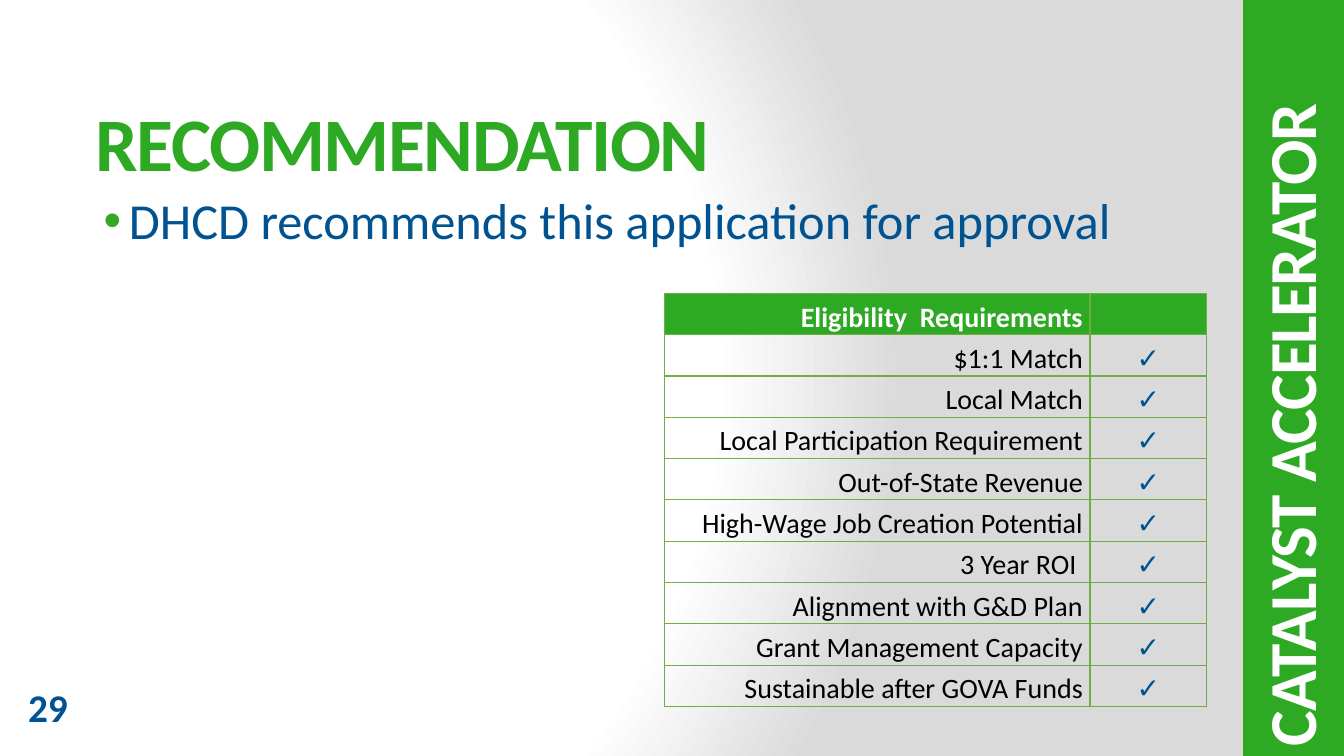
from dataclasses import dataclass

from lxml import etree
from pptx import Presentation
from pptx.dml.color import RGBColor
from pptx.enum.shapes import MSO_SHAPE
from pptx.enum.text import MSO_ANCHOR, PP_ALIGN
from pptx.oxml import parse_xml
from pptx.oxml.ns import nsdecls, qn
from pptx.util import Inches, Pt

RECT = MSO_SHAPE.RECTANGLE
TOP, MIDDLE, BOTTOM = MSO_ANCHOR.TOP, MSO_ANCHOR.MIDDLE, MSO_ANCHOR.BOTTOM
LEFT, CENTER, RIGHT = PP_ALIGN.LEFT, PP_ALIGN.CENTER, PP_ALIGN.RIGHT


@dataclass(frozen=True)
class Theme:
    face: str = "Calibri"
    green: str = "2DA923"
    dot: str = "38A725"
    blue: str = "005390"
    white: str = "FFFFFF"
    black: str = "000000"
    gray: str = "DADADA"
    rule: str = "70AD47"
    title: int = 54
    side: int = 48
    body: int = 36
    number: int = 28
    cell: int = 20


class Page:
    def __init__(self, slide, theme):
        self.slide = slide
        self.theme = theme

    def backdrop(self):
        """Fill the background with a circular gradient, white to gray."""
        stops = "".join(
            f'<a:gs pos="{pos * 1000}"><a:srgbClr val="{color}"/></a:gs>'
            for pos, color in ((0, self.theme.white), (75, self.theme.white),
                               (100, self.theme.gray)))
        self.slide.element.cSld.insert(0, parse_xml(
            f'<p:bg {nsdecls("p", "a")}><p:bgPr><a:gradFill rotWithShape="1">'
            f'<a:gsLst>{stops}</a:gsLst><a:path path="circle">'
            '<a:fillToRect l="20000" t="50000" r="100000" b="50000"/>'
            '</a:path></a:gradFill><a:effectLst/></p:bgPr></p:bg>'))

    def band(self, x, y, w, h, color):
        shape = self.slide.shapes.add_shape(
            RECT, Inches(x), Inches(y), Inches(w), Inches(h))
        shape.shadow.inherit = False
        shape.fill.solid()
        shape.fill.fore_color.rgb = RGBColor.from_string(color)
        shape.line.fill.background()

    def words(self, para, text, size, color, bold=False, align=LEFT):
        """Put one styled run in a paragraph and return the run."""
        run = para.add_run()
        run.text = text
        para.alignment = align
        font = para.font
        font.name, font.size, font.bold = self.theme.face, Pt(size), bold
        font.color.rgb = RGBColor.from_string(color)
        return run

    def text(self, x, y, w, h, text, size, color, bold=True, anchor=TOP,
             turn=0, tight=False, bullet=False):
        box = self.slide.shapes.add_textbox(
            Inches(x), Inches(y), Inches(w), Inches(h))
        box.rotation = turn
        frame = box.text_frame
        frame.word_wrap = True
        frame.vertical_anchor = anchor
        para = frame.paragraphs[0]
        if bullet:
            self.bullet(para)
        run = self.words(para, text, size, color, bold)
        if tight:
            run._r.get_or_add_rPr().set("spc", "-100")

    def bullet(self, para):
        props = para._p.get_or_add_pPr()
        props.set("marL", str(Inches(0.38)))
        props.set("indent", str(Inches(-0.25)))
        color = etree.SubElement(props, qn("a:buClr"))
        etree.SubElement(color, qn("a:srgbClr"), val=self.theme.dot)
        etree.SubElement(props, qn("a:buFont"), typeface="Arial")
        etree.SubElement(props, qn("a:buChar"), char="•")

    def border(self, cell):
        props = cell._tc.get_or_add_tcPr()
        for spot, side in enumerate(("lnL", "lnR", "lnT", "lnB")):
            props.insert(spot, parse_xml(
                f'<a:{side} {nsdecls("a")} w="12700"><a:solidFill>'
                f'<a:srgbClr val="{self.theme.rule}"/></a:solidFill></a:{side}>'))

    def cell(self, cell, text, color, bold, align, gap, fill=None):
        cell.margin_left = cell.margin_right = Inches(0.07)
        cell.margin_top = cell.margin_bottom = 0
        cell.vertical_anchor = BOTTOM
        if fill:
            cell.fill.solid()
            cell.fill.fore_color.rgb = RGBColor.from_string(fill)
        else:
            cell.fill.background()
        self.border(cell)
        para = cell.text_frame.paragraphs[0]
        para.line_spacing = gap
        if text:
            self.words(para, text, self.theme.cell, color, bold, align)

    def checks(self, x, y, widths, step, head, items, single):
        """Draw a header row, then one ticked row per item."""
        look = self.theme
        count = len(items) + 1
        table = self.slide.shapes.add_table(
            count, 2, Inches(x), Inches(y), Inches(sum(widths)),
            Inches(step * count)).table
        table.horz_banding = False
        for column, width in zip(table.columns, widths):
            column.width = Inches(width)
        for row in table.rows:
            row.height = Inches(step)
        for col, text in enumerate((head, "")):
            self.cell(table.cell(0, col), text, look.white, True, RIGHT,
                      1.15, look.green)
        for row, item in enumerate(items, 1):
            gap = 1.0 if item in single else 1.15
            self.cell(table.cell(row, 0), item, look.black, False, RIGHT, gap)
            self.cell(table.cell(row, 1), "✓", look.blue, True, CENTER, 1.15)


def main():
    deck = Presentation()
    deck.slide_width, deck.slide_height = Inches(13.33), Inches(7.5)
    look = Theme()
    page = Page(deck.slides.add_slide(deck.slide_layouts[6]), look)

    page.backdrop()
    page.band(12.33, 0, 1, 7.5, look.green)
    page.text(0.18, 6.73, 1.06, 0.57, "29", look.number, look.blue)
    page.text(0.85, 0.86, 11.49, 1.08, "RECOMMENDATION", look.title,
              look.green, anchor=MIDDLE, tight=True)
    page.text(0.8, 1.83, 11.36, 5.09,
              "DHCD recommends this application for approval",
              look.body, look.blue, bold=False, bullet=True)
    page.text(8.85, 3.02, 7.88, 1.08, "CATALYST ACCELERATOR", look.side,
              look.white, anchor=MIDDLE, turn=270, tight=True)

    items = ("$1:1 Match", "Local Match", "Local Participation Requirement",
             "Out-of-State Revenue", "High-Wage Job Creation Potential",
             "3 Year ROI ", "Alignment with G&D Plan",
             "Grant Management Capacity", "Sustainable after GOVA Funds")
    page.checks(6.59, 2.91, (4.22, 1.16), 0.41, "Eligibility  Requirements",
                items, single=items[2:4])
    deck.save("out.pptx")


if __name__ == "__main__":
    main()
